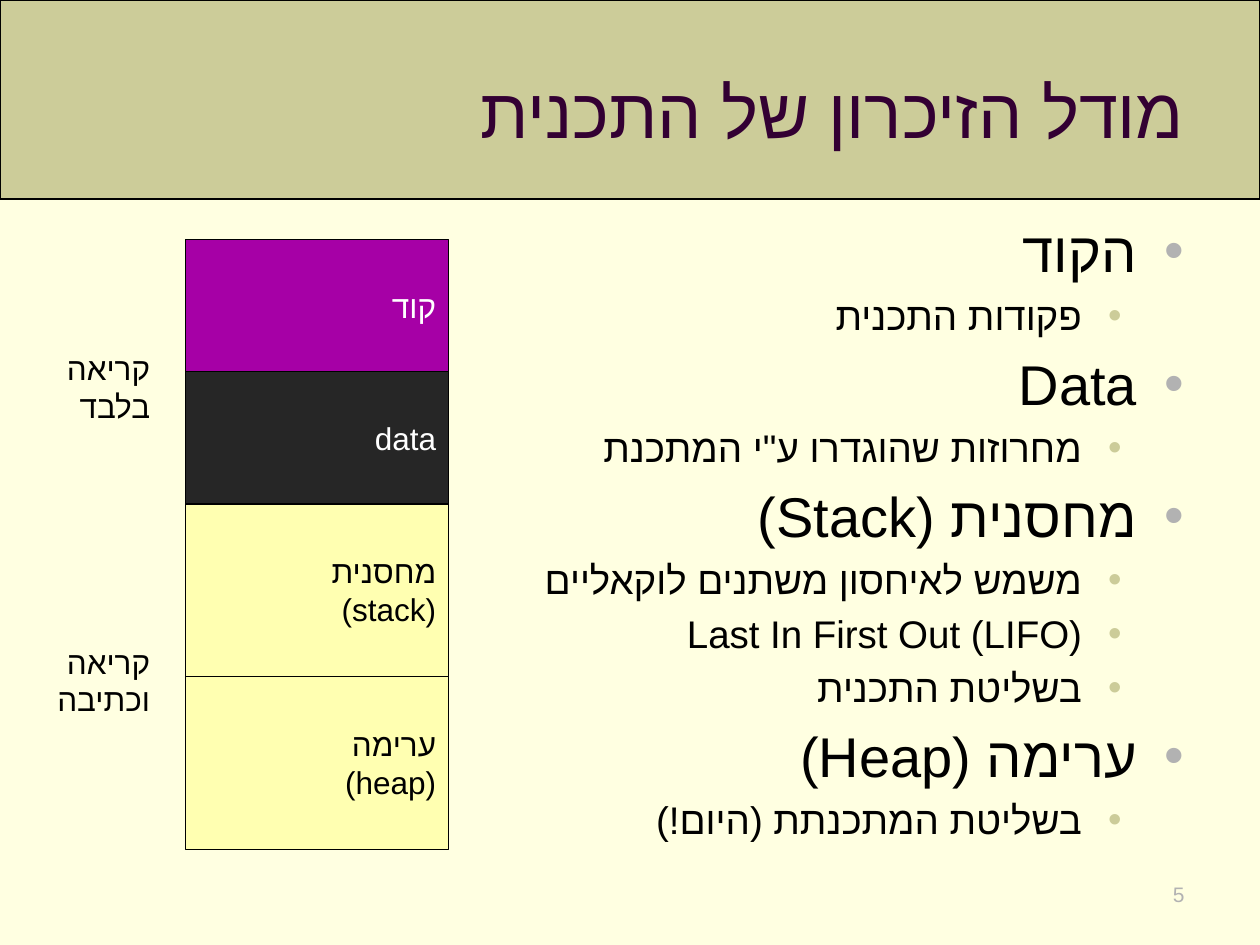
"""Build a slide on the memory model of a program."""
from lxml import etree
from pptx import Presentation
from pptx.dml.color import RGBColor
from pptx.enum.shapes import MSO_SHAPE
from pptx.enum.text import MSO_ANCHOR, MSO_AUTO_SIZE, PP_ALIGN
from pptx.oxml.ns import qn
from pptx.util import Inches, Pt

RECTANGLE = MSO_SHAPE.RECTANGLE
MIDDLE = MSO_ANCHOR.MIDDLE
NO_FIT = MSO_AUTO_SIZE.NONE
RIGHT = PP_ALIGN.RIGHT

BODY_SIZES = (32, 22)
BULLET_COLORS = ("B2B2B2", "CCCC99")
OUTLINE = (
    (0, "הקוד "),
    (1, "פקודות התכנית "),
    (0, "Data"),
    (1, "מחרוזות שהוגדרו ע\"י המתכנת"),
    (0, "מחסנית (Stack)"),
    (1, "משמש לאיחסון משתנים לוקאליים"),
    (1, "Last In First Out (LIFO)"),
    (1, "בשליטת התכנית"),
    (0, "ערימה (Heap)"),
    (1, "בשליטת המתכנתת (היום!)"),
)
SEGMENTS = (
    ("קוד", 1.05, "A600A6", "FFFFFF"),
    ("data", 1.05, "262626", "FFFFFF"),
    ("מחסנית \v(stack)", 1.37, "FFFFB1", "000000"),
    ("ערימה\v(heap)", 1.37, "FFFFB1", "000000"),
)
LABELS = (
    ("קריאה \nבלבד", 0.32, 2.72, 0.97, 0.71, 18, "000000"),
    ("קריאה \nוכתיבה", 0.32, 5.05, 0.97, 0.71, 18, "000000"),
    ("5", 7.17, 6.95, 2.33, 0.4, 12, "B2B2B2"),
)


def rgb(value):
    """Turn a hex string into a colour."""
    return RGBColor.from_string(value)


def place(shape, left, top, width, height):
    """Move and size a shape, in inches."""
    shape.left, shape.top = Inches(left), Inches(top)
    shape.width, shape.height = Inches(width), Inches(height)


def format_para(para, size, color, font="Arial"):
    """Set a paragraph right to left and format its runs."""
    para.alignment = RIGHT
    para._p.get_or_add_pPr().set("rtl", "1")
    for span in para.runs:
        span.font.size = Pt(size)
        span.font.name = font
        span.font.color.rgb = rgb(color)
        complex_font = etree.SubElement(span.font._element, qn("a:cs"))
        complex_font.set("typeface", "Arial")


def set_bullet(para, color):
    """Give a paragraph a coloured round bullet."""
    properties = para._p.get_or_add_pPr()
    bullet_color = etree.SubElement(properties, qn("a:buClr"))
    etree.SubElement(bullet_color, qn("a:srgbClr")).set("val", color)
    etree.SubElement(properties, qn("a:buFont")).set("typeface", "Arial")
    etree.SubElement(properties, qn("a:buChar")).set("char", "•")


def add_box(slide, left, top, width, height, fill):
    """Add a filled rectangle with a thin black outline."""
    box = slide.shapes.add_shape(RECTANGLE, 0, 0, 0, 0)
    place(box, left, top, width, height)
    box.shadow.inherit = False
    box.fill.solid()
    box.fill.fore_color.rgb = rgb(fill)
    box.line.color.rgb = rgb("000000")
    box.line.width = Pt(0.75)
    return box


def add_title(slide):
    """Fill the title and put the header band behind it."""
    title = slide.shapes.title
    place(title, 0.5, 0.25, 9, 1.25)
    title.text_frame.text = "מודל הזיכרון של התכנית"
    title.text_frame.vertical_anchor = MIDDLE
    title.text_frame.auto_size = NO_FIT
    format_para(title.text_frame.paragraphs[0], 40, "330033", "Times New Roman")
    band = add_box(slide, 0, 0, 10, 1.58, "CCCC99")
    title.element.addprevious(band.element)


def add_outline(slide):
    """Fill the body with the two-level list."""
    body = slide.placeholders[1]
    place(body, 0.5, 1.67, 9, 5.33)
    frame = body.text_frame
    frame.text = "\n".join(text for _, text in OUTLINE)
    frame.auto_size = NO_FIT
    for para, (level, _) in zip(frame.paragraphs, OUTLINE):
        para.level = level
        format_para(para, BODY_SIZES[level], "000000")
        set_bullet(para, BULLET_COLORS[level])


def add_label(slide, text, left, top, width, height, size, color):
    """Add a wrapped text box."""
    label = slide.shapes.add_textbox(0, 0, 0, 0)
    place(label, left, top, width, height)
    label.text_frame.word_wrap = True
    label.text_frame.text = text
    for para in label.text_frame.paragraphs:
        format_para(para, size, color)


def add_memory_stack(slide):
    """Stack the memory segments from top to bottom."""
    top = 1.9
    for text, height, fill, color in SEGMENTS:
        box = add_box(slide, 1.47, top, 2.09, height, fill)
        frame = box.text_frame
        frame.word_wrap = False
        frame.vertical_anchor = MIDDLE
        frame.text = text
        format_para(frame.paragraphs[0], 18, color)
        top += height


def main():
    """Build and save the deck."""
    deck = Presentation()
    deck.slide_width, deck.slide_height = Inches(10), Inches(7.5)
    slide = deck.slides.add_slide(deck.slide_layouts[1])
    slide.background.fill.solid()
    slide.background.fill.fore_color.rgb = rgb("FFFFE1")
    add_title(slide)
    add_outline(slide)
    for label in LABELS:
        add_label(slide, *label)
    add_memory_stack(slide)
    deck.save("out.pptx")


if __name__ == "__main__":
    main()
